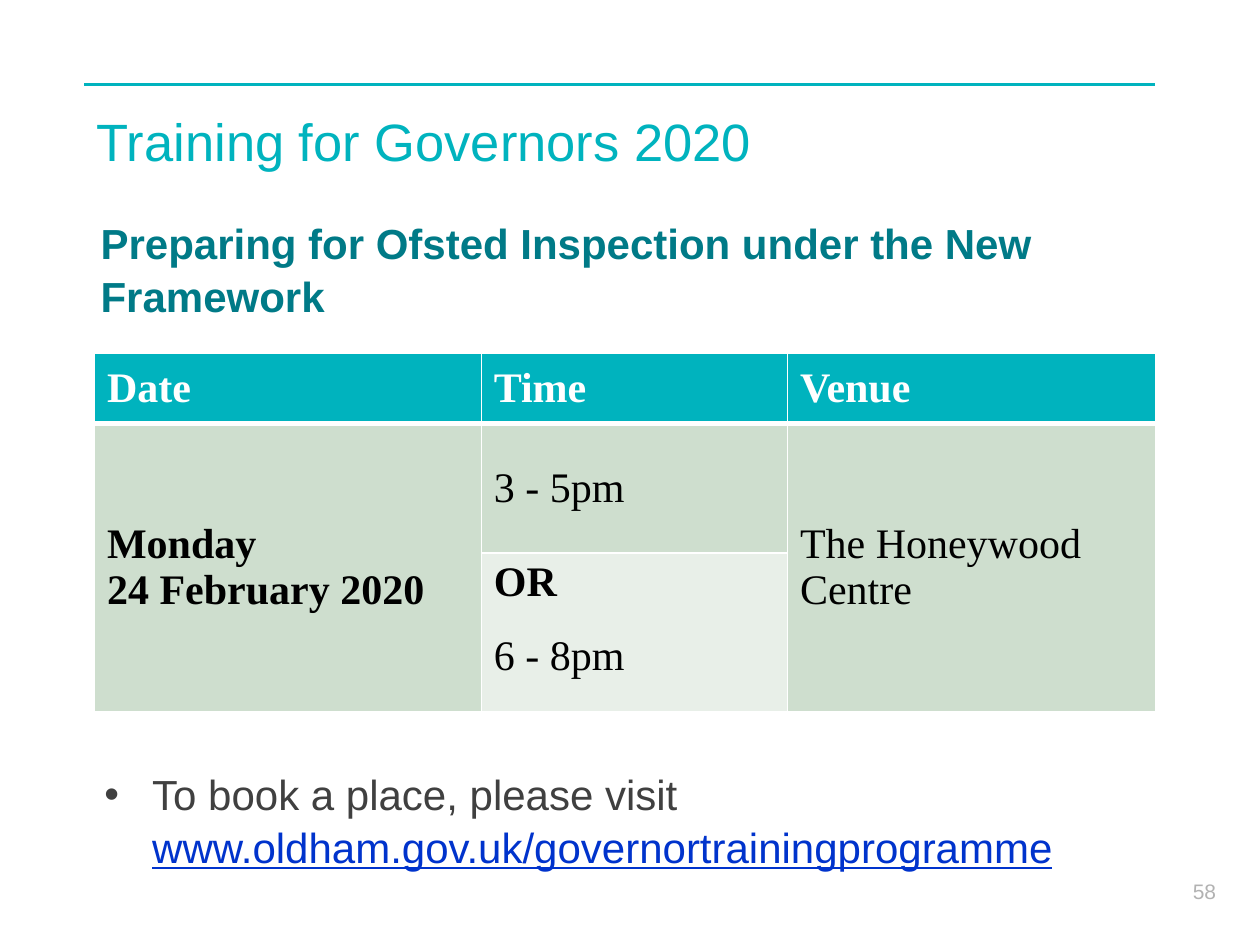
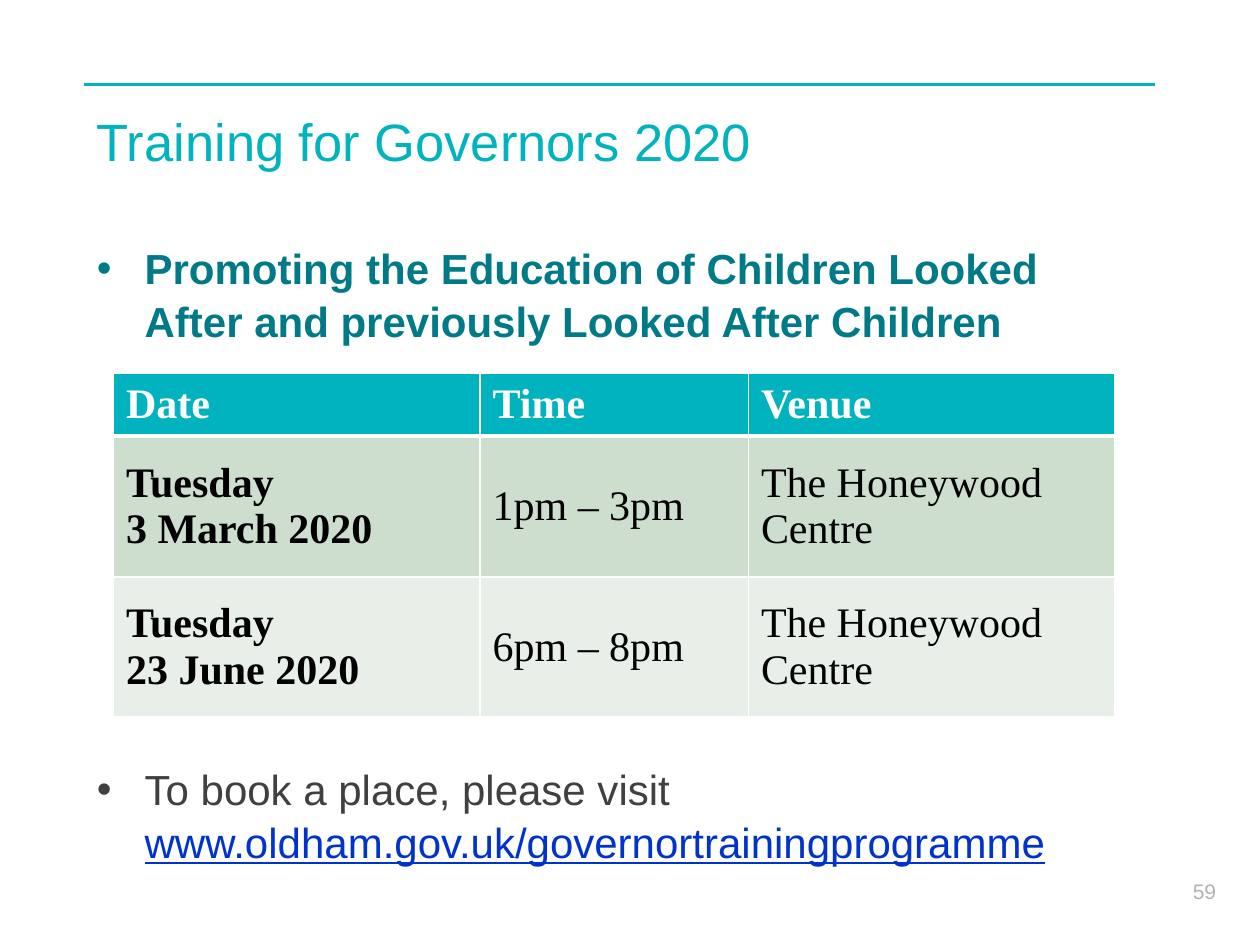
from lxml import etree
from pptx import Presentation
from pptx.dml.color import RGBColor
from pptx.enum.shapes import MSO_CONNECTOR
from pptx.enum.text import MSO_ANCHOR, PP_ALIGN
from pptx.oxml.ns import qn
from pptx.util import Inches, Pt

LEFT, RIGHT = PP_ALIGN.LEFT, PP_ALIGN.RIGHT
TOP, MIDDLE = MSO_ANCHOR.TOP, MSO_ANCHOR.MIDDLE
STRAIGHT = MSO_CONNECTOR.STRAIGHT

TURQUOISE = RGBColor(0x00, 0xB3, 0xBE)
TEAL = RGBColor(0x00, 0x7A, 0x87)
CHARCOAL = RGBColor(0x40, 0x40, 0x40)
LINK_BLUE = RGBColor(0x00, 0x33, 0xCC)
GREY = RGBColor(0xB2, 0xB2, 0xB2)
BLACK = RGBColor(0x00, 0x00, 0x00)
WHITE = RGBColor(0xFF, 0xFF, 0xFF)
BAND_DARK = RGBColor(0xCE, 0xDE, 0xCE)
BAND_LIGHT = RGBColor(0xE8, 0xEF, 0xE8)

BODY_FONT = "Arial"
TABLE_FONT = "Times New Roman"
TITLE = "Training for Governors 2020"
HEADINGS = ["Date", "Time", "Venue"]
VENUE = "The Honeywood Centre"
BOOKING_URL = "www.oldham.gov.uk/governortrainingprogramme"


def add_run(p, text, size=24, color=BLACK, bold=False, underline=False, font=BODY_FONT):
    r = p.add_run()
    r.text = text
    r.font.name = font
    r.font.size = Pt(size)
    r.font.color.rgb = color
    r.font.bold = bold
    r.font.underline = underline


def add_bullet(p):
    pPr = p._p.get_or_add_pPr()
    pPr.set("marL", str(Inches(0.38)))
    pPr.set("indent", str(-Inches(0.38)))
    etree.SubElement(pPr, qn("a:buFont")).set("typeface", BODY_FONT)
    etree.SubElement(pPr, qn("a:buChar")).set("char", "•")


def add_text(s, text, left, top, width, height, align=LEFT, spacing=1.05,
             bullet=False, **run_format):
    box = s.shapes.add_textbox(Inches(left), Inches(top), Inches(width), Inches(height))
    tf = box.text_frame
    tf.word_wrap = True
    p = tf.paragraphs[0]
    if bullet:
        add_bullet(p)
    p.alignment = align
    p.line_spacing = spacing
    add_run(p, text, **run_format)
    return p


def add_rule(s):
    line = s.shapes.add_connector(STRAIGHT, Inches(0.67), Inches(0.67),
                                  Inches(9.17), Inches(0.67))
    line.line.color.rgb = TURQUOISE
    line.line.width = Pt(1.5)
    etree.SubElement(line._element.spPr, qn("a:effectLst"))


def add_training_slide(prs, number):
    s = prs.slides.add_slide(prs.slide_layouts[6])
    add_rule(s)
    add_text(s, str(number), 7.83, 6.92, 1.92, 0.3, align=RIGHT, spacing=1.0,
             size=12, color=GREY)
    add_text(s, TITLE, 0.67, 0.79, 8.5, 0.7, size=30, color=TURQUOISE)
    return s


def add_booking(s, left, top):
    p = add_text(s, "To book a place, please visit ", left, top, 8.5, 0.9,
                 bullet=True, color=CHARCOAL)
    add_run(p, BOOKING_URL, color=LINK_BLUE, underline=True)


def set_borders(cell, top, bottom):
    tcPr = cell._tc.get_or_add_tcPr()
    widths = {"a:lnL": 1, "a:lnR": 1, "a:lnT": top, "a:lnB": bottom}
    for i, (tag, width) in enumerate(widths.items()):
        ln = etree.Element(qn(tag), w=str(Pt(width)))
        fill = etree.SubElement(ln, qn("a:solidFill"))
        etree.SubElement(fill, qn("a:srgbClr")).set("val", str(WHITE))
        tcPr.insert(i, ln)


def fill_cell(cell, lines, fill, color=BLACK, bold=(False,), gap=0, anchor=MIDDLE):
    cell.fill.solid()
    cell.fill.fore_color.rgb = fill
    cell.vertical_anchor = anchor
    tf = cell.text_frame
    for i, line in enumerate(lines):
        p = tf.add_paragraph() if i else tf.paragraphs[0]
        if i:
            p.space_before = Pt(gap)
        add_run(p, line, color=color, bold=bold[i % len(bold)], font=TABLE_FONT)


def add_schedule(s, left, top, widths, heights, sessions):
    rows, cols = len(heights), len(widths)
    table = s.shapes.add_table(rows, cols, Inches(left), Inches(top),
                               Inches(sum(widths)), Inches(sum(heights))).table
    for column, width in zip(table.columns, widths):
        column.width = Inches(width)
    for row, height in zip(table.rows, heights):
        row.height = Inches(height)
    for c, heading in enumerate(HEADINGS):
        cell = table.cell(0, c)
        fill_cell(cell, [heading], TURQUOISE, color=WHITE, bold=(True,))
        set_borders(cell, 1, 3)
    for r, session in enumerate(sessions, 1):
        for c, lines in enumerate(session):
            cell = table.cell(r, c)
            band = BAND_DARK if r % 2 else BAND_LIGHT
            if lines[:1] == ["OR"]:
                fill_cell(cell, lines, band, bold=(True, False), gap=15.5, anchor=TOP)
            else:
                fill_cell(cell, lines, band, bold=(c == 0,))
            set_borders(cell, 3 if r == 1 else 1, 1)
    return table


def add_ofsted_slide(prs):
    s = add_training_slide(prs, 58)
    add_booking(s, 0.73, 6.03)
    table = add_schedule(s, 0.75, 2.8, [3.07, 2.43, 2.92], [0.56, 1.03, 1.26], [
        [["Monday", "24 February 2020"], ["3 - 5pm"], [VENUE]],
        [[], ["OR", "6 - 8pm"], []],
    ])
    for c in (0, 2):
        table.cell(1, c).merge(table.cell(2, c))
    add_text(s, "Preparing for Ofsted Inspection under the New Framework",
             0.7, 1.66, 7.85, 0.9, color=TEAL, bold=True)


def add_looked_after_slide(prs):
    s = add_training_slide(prs, 59)
    add_text(s, "Promoting the Education of Children Looked After and previously "
             "Looked After Children", 0.67, 1.86, 8.5, 0.9, bullet=True,
             color=TEAL, bold=True)
    add_booking(s, 0.67, 5.99)
    add_schedule(s, 0.9, 2.96, [2.91, 2.13, 2.91], [0.5, 1.12, 1.11], [
        [["Tuesday", "3 March 2020"], ["1pm – 3pm"], [VENUE]],
        [["Tuesday", "23 June 2020"], ["6pm – 8pm"], [VENUE]],
    ])


def main():
    prs = Presentation()
    prs.slide_width = Inches(10)
    prs.slide_height = Inches(7.5)
    add_ofsted_slide(prs)
    add_looked_after_slide(prs)
    prs.save("out.pptx")


if __name__ == "__main__":
    main()
